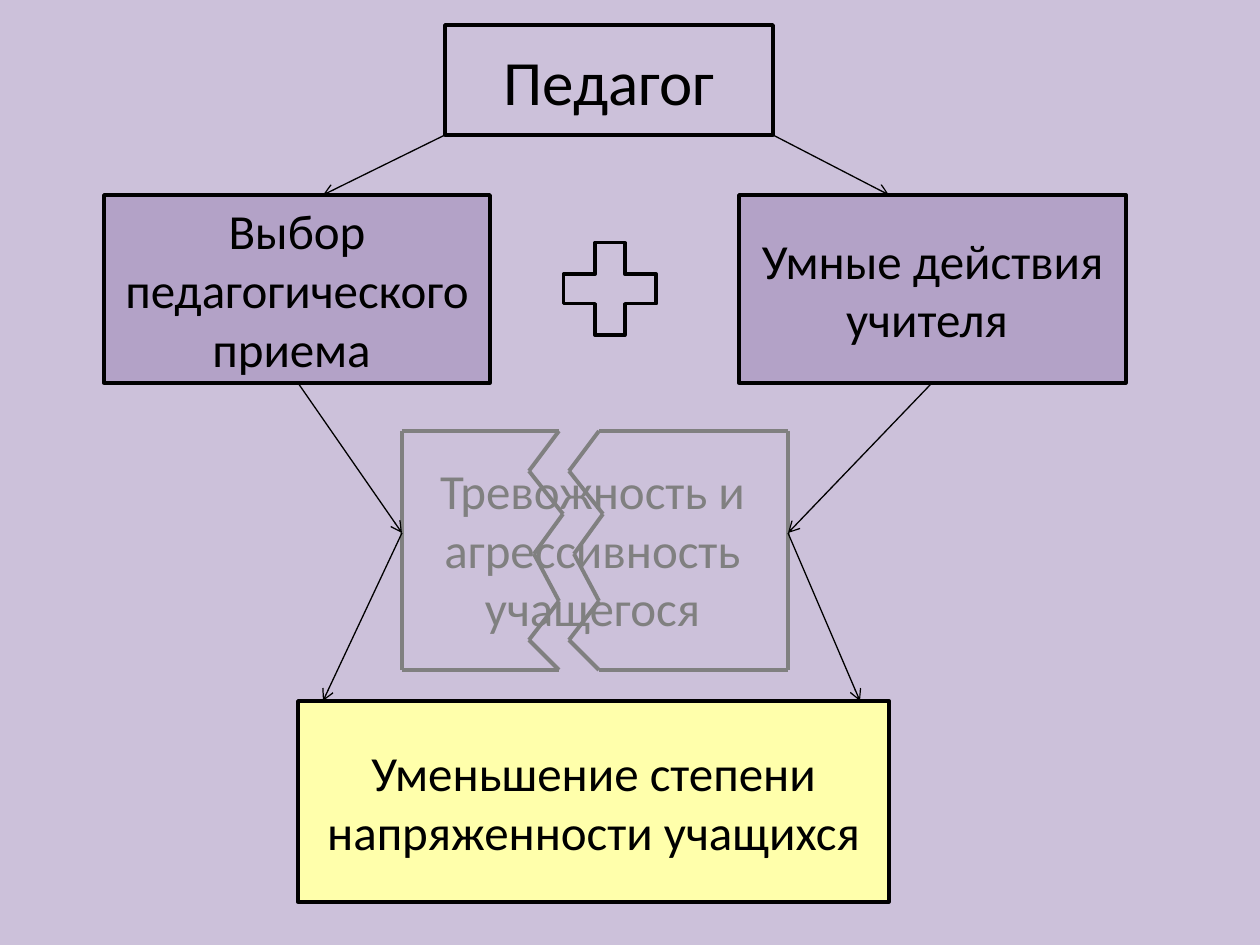
"""Build a flow diagram of how a teacher lowers pupils' tension."""
from itertools import pairwise

from lxml.etree import SubElement
from pptx import Presentation
from pptx.dml.color import RGBColor
from pptx.enum.shapes import MSO_CONNECTOR, MSO_SHAPE
from pptx.enum.text import MSO_ANCHOR, MSO_AUTO_SIZE, PP_ALIGN
from pptx.oxml.ns import qn
from pptx.util import Emu, Pt

BLACK, GRAY, LILAC, PURPLE, YELLOW = "000000", "808080", "CCC1DA", "B3A2C7", "FFFFAB"
TITLE = ("Педагог", (445, 25, 328, 110))
BOXES = [
    ("Выбор педагогического приема ", (104, 195, 386, 188), PURPLE),
    ("Умные действия учителя ", (739, 195, 387, 188), PURPLE),
    ("Уменьшение степени напряженности учащихся", (298, 701, 591, 201), YELLOW),
]
ANXIETY = ("Тревожность и агрессивность учащегося", (404, 435, 377, 227))
PLUS = (547, 226, 126, 126)
CRACK = [(559, 431), (529, 471), (563, 514), (534, 554), (559, 601), (529, 640), (559, 670)]
CRACK_GAP, LEFT_EDGE, RIGHT_EDGE = 40, 402, 788
ARROWS = [
    [(445, 135), (323, 195)],
    [(773, 135), (889, 195)],
    [(298, 383), (402, 533), (323, 701)],
    [(932, 383), (788, 533), (860, 701)],
]


def px(n):
    return Emu(round(n * 914400 / 126))


def color(value):
    return RGBColor.from_string(value)


def write(sp, text, size, ink=BLACK):
    tf = sp.text_frame
    tf.word_wrap = True
    tf.auto_size = MSO_AUTO_SIZE.NONE
    tf.vertical_anchor = MSO_ANCHOR.MIDDLE
    p = tf.paragraphs[0]
    p.alignment = PP_ALIGN.CENTER
    r = p.add_run()
    r.text = text
    r.font.name, r.font.size = "Calibri", Pt(size)
    r.font.color.rgb = color(ink)


def outline(sp, fill=None):
    if fill:
        sp.fill.solid()
        sp.fill.fore_color.rgb = color(fill)
    else:
        sp.fill.background()
    sp.line.color.rgb = color(BLACK)
    sp.line.width = Pt(2)


def add_shape(s, kind, box, fill=None):
    sp = s.shapes.add_shape(kind, *map(px, box))
    sp.shadow.inherit = False
    outline(sp, fill)
    return sp


def add_path(s, points, ink, width, arrow=False):
    for start, end in pairwise(points):
        line = s.shapes.add_connector(MSO_CONNECTOR.STRAIGHT, *map(px, start + end))
        line.line.color.rgb = color(ink)
        line.line.width = Pt(width)
        if arrow:
            SubElement(line.line._get_or_add_ln(), qn("a:tailEnd"), type="arrow")
        SubElement(line._element.spPr, qn("a:effectLst"))


def main():
    prs = Presentation()
    prs.slide_width, prs.slide_height = px(1260), px(945)
    s = prs.slides.add_slide(prs.slide_layouts[5])
    s.background.fill.solid()
    s.background.fill.fore_color.rgb = color(LILAC)

    text, box = TITLE
    title = s.shapes.title
    title.left, title.top, title.width, title.height = map(px, box)
    outline(title)
    write(title, text, 36)

    for text, box, fill in BOXES:
        write(add_shape(s, MSO_SHAPE.RECTANGLE, box, fill), text, 28)
    text, box = ANXIETY
    write(s.shapes.add_textbox(*map(px, box)), text, 28, GRAY)

    for edge, gap in ((LEFT_EDGE, 0), (RIGHT_EDGE, CRACK_GAP)):
        crack = [(x + gap, y) for x, y in CRACK]
        top, bottom = crack[0][1], crack[-1][1]
        add_path(s, crack + [(edge, bottom), (edge, top), crack[0]], GRAY, 2.25)

    add_shape(s, MSO_SHAPE.MATH_PLUS, PLUS)
    for points in ARROWS:
        add_path(s, points, BLACK, 0.75, arrow=True)
    prs.save("out.pptx")


if __name__ == "__main__":
    main()
